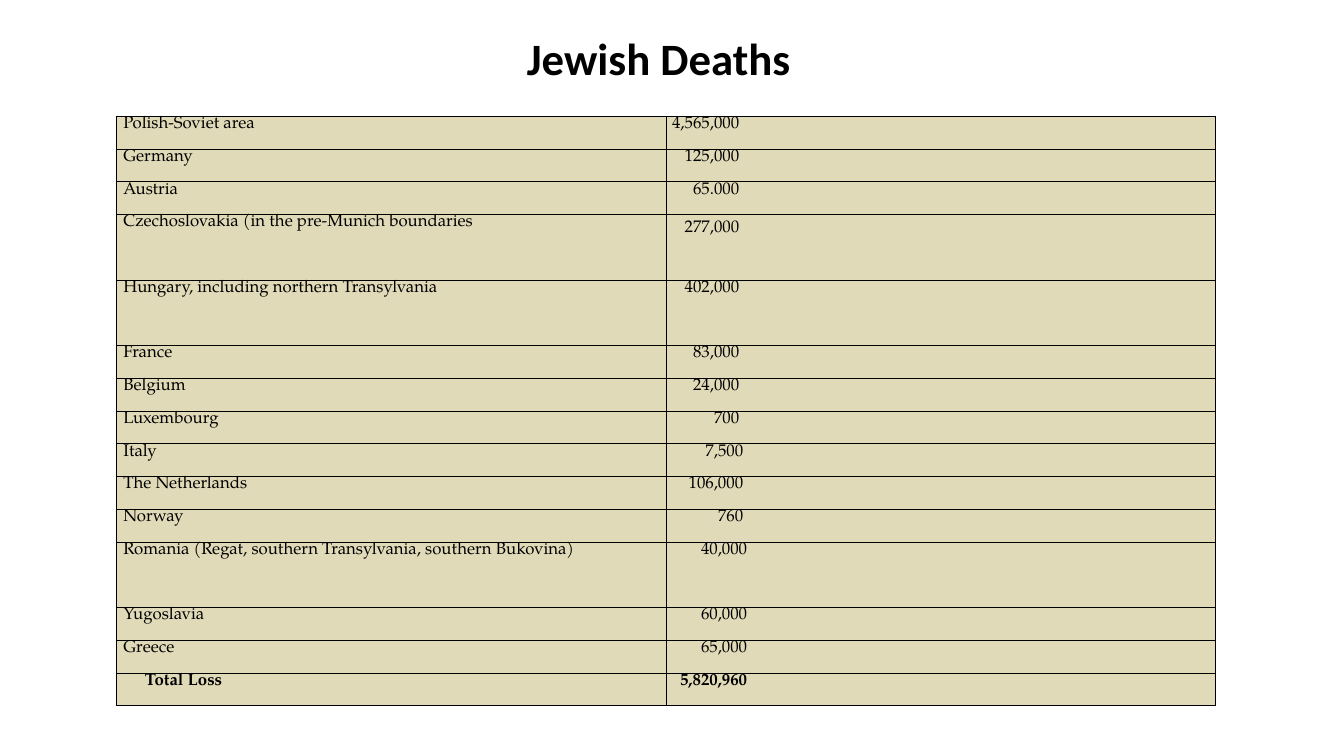
from dataclasses import dataclass

from lxml import etree
from pptx import Presentation
from pptx import util as u
from pptx.dml.color import RGBColor
from pptx.enum import text
from pptx.oxml import ns


@dataclass(frozen=True)
class Theme:
    ink: str = "000000"
    cell: str = "E0DAB8"
    title_font: str = "Calibri"
    body_font: str = "TeX Gyre Pagella"
    title_size: int = 32
    body_size: int = 12
    border: float = 0.5


THEME = Theme()
INSET = 0.18
SHORT, TALL = 1, 2
MILLIONS, THOUSANDS, TOTALS = 12, 11.9, 11.8

LOSSES = [
    ("Polish-Soviet area", "4,565,000", SHORT, MILLIONS),
    ("Germany", "125,000", SHORT, MILLIONS),
    ("Austria", "65.000", SHORT, MILLIONS),
    ("Czechoslovakia (in the pre-Munich boundaries", "277,000", TALL, MILLIONS),
    ("Hungary, including northern Transylvania", "402,000", TALL, MILLIONS),
    ("France", "83,000", SHORT, MILLIONS),
    ("Belgium", "24,000", SHORT, MILLIONS),
    ("Luxembourg", "700", SHORT, MILLIONS),
    ("Italy", "7,500", SHORT, THOUSANDS),
    ("The Netherlands", "106,000", SHORT, THOUSANDS),
    ("Norway", "760", SHORT, THOUSANDS),
    ("Romania (Regat, southern Transylvania, southern Bukovina)", "40,000", TALL, TOTALS),
    ("Yugoslavia", "60,000", SHORT, TOTALS),
    ("Greece", "65,000", SHORT, TOTALS),
    ("Total Loss", "5,820,960", SHORT, TOTALS),
]


def set_all(target, values):
    for name, value in values.items():
        setattr(target, name, value)


def write(tf, words, font, size, bold, align):
    p = tf.paragraphs[0]
    p.alignment = align
    r = p.add_run()
    r.text = words
    set_all(r.font, {"name": font, "size": u.Pt(size), "bold": bold})
    r.font.color.rgb = RGBColor.from_string(THEME.ink)


def add_borders(cell):
    tc_pr = cell._tc.get_or_add_tcPr()
    for side in ("lnL", "lnR", "lnT", "lnB"):
        ln = etree.SubElement(tc_pr, ns.qn(f"a:{side}"), w=str(u.Pt(THEME.border)))
        fill = etree.SubElement(ln, ns.qn("a:solidFill"))
        etree.SubElement(fill, ns.qn("a:srgbClr"), val=THEME.ink)


def fill_cell(cell, words, bold, align, left=INSET, right=INSET, top=0):
    add_borders(cell)
    cell.fill.solid()
    cell.fill.fore_color.rgb = RGBColor.from_string(THEME.cell)
    set_all(cell, {
        "margin_left": u.Cm(left),
        "margin_right": u.Cm(right),
        "margin_top": u.Cm(top),
        "margin_bottom": 0,
        "vertical_anchor": text.MSO_ANCHOR.TOP,
    })
    write(cell.text_frame, words, THEME.body_font, THEME.body_size, bold, align)


def add_title(s, left, top, width, height):
    sp = s.shapes.add_textbox(*map(u.Cm, (left, top, width, height)))
    tf = sp.text_frame
    set_all(tf, {"word_wrap": True, "auto_size": text.MSO_AUTO_SIZE.SHAPE_TO_FIT_TEXT})
    write(tf, "Jewish Deaths ", THEME.title_font, THEME.title_size, True, text.PP_ALIGN.CENTER)


def add_losses(s, left, top, width, height):
    box = map(u.Cm, (left, top, width, height))
    table = s.shapes.add_table(len(LOSSES), 2, *box).table
    set_all(table, {"first_row": False, "horz_banding": False})
    for column in table.columns:
        column.width = u.Cm(width / 2)
    unit = height / sum(units for _, _, units, _ in LOSSES)
    for row, (place, count, units, right) in zip(table.rows, LOSSES):
        row.height = u.Cm(unit * units)
        total = place == "Total Loss"
        drop = 0.15 if place.startswith("Czech") else 0
        name_cell, count_cell = row.cells
        fill_cell(name_cell, place, total, text.PP_ALIGN.LEFT, left=0.72 if total else INSET)
        fill_cell(count_cell, count, total, text.PP_ALIGN.RIGHT, left=0, right=right, top=drop)


def main():
    prs = Presentation()
    set_all(prs, {"slide_width": u.Cm(33.87), "slide_height": u.Cm(19.05)})
    s = prs.slides.add_slide(prs.slide_layouts[6])
    add_losses(s, 2.93, 2.93, 27.7, 14.86)
    add_title(s, 3.17, 0.64, 27.12, 1.63)
    prs.save("out.pptx")


if __name__ == "__main__":
    main()
